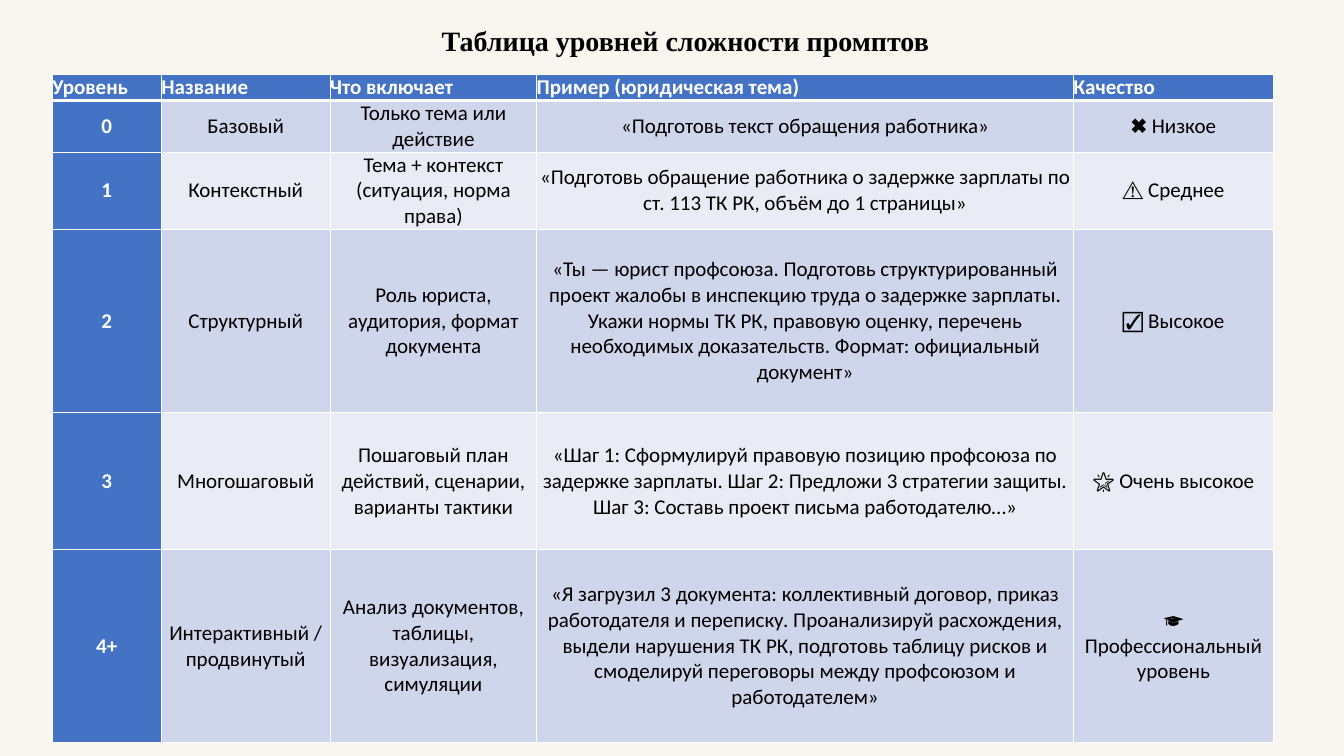
import pptx
import pptx.util
import pptx.dml.color
import pptx.enum.text
import pptx.oxml
import pptx.oxml.ns
from pptx.util import Inches

ALIGN = pptx.enum.text.PP_ALIGN
ANCHOR = pptx.enum.text.MSO_ANCHOR

COLUMNS = [1.3, 2.01, 2.46, 6.39, 2.38]
ROWS = [0.31, 0.57, 0.87, 2.19, 1.63, 2.29]
LEVELS = [
    ["Уровень", "Название", "Что включает", "Пример (юридическая тема)", "Качество"],
    ["0", "Базовый", "Только тема или действие",
     "«Подготовь текст обращения работника»", "✖ Низкое"],
    ["1", "Контекстный", "Тема + контекст (ситуация, норма права)",
     "«Подготовь обращение работника о задержке зарплаты по ст. 113 ТК РК, "
     "объём до 1 страницы»", "⚠ Среднее"],
    ["2", "Структурный", "Роль юриста, аудитория, формат документа",
     "«Ты — юрист профсоюза. Подготовь структурированный проект жалобы в инспекцию труда "
     "о задержке зарплаты. Укажи нормы ТК РК, правовую оценку, перечень необходимых "
     "доказательств. Формат: официальный документ»", "☑ Высокое"],
    ["3", "Многошаговый", "Пошаговый план действий, сценарии, варианты тактики",
     "«Шаг 1: Сформулируй правовую позицию профсоюза по задержке зарплаты. "
     "Шаг 2: Предложи 3 стратегии защиты. Шаг 3: Составь проект письма работодателю…»",
     "🌟 Очень высокое"],
    ["4+", "Интерактивный / продвинутый",
     "Анализ документов, таблицы, визуализация, симуляции",
     "«Я загрузил 3 документа: коллективный договор, приказ работодателя и переписку. "
     "Проанализируй расхождения, выдели нарушения ТК РК, подготовь таблицу рисков и "
     "смоделируй переговоры между профсоюзом и работодателем»",
     "🎓 Профессиональный уровень"],
]


def color(value):
    return pptx.dml.color.RGBColor.from_string(value)


class Deck:
    body_font = "Calibri"
    title_font = "Times New Roman"
    paper, accent, white, black = "F9F6F0", "4472C4", "FFFFFF", "000000"
    bands = ["E9EBF5", "CFD5EA"]

    def __init__(self):
        self.prs = pptx.Presentation()
        self.prs.slide_width, self.prs.slide_height = Inches(16), Inches(9)
        self.s = self.prs.slides.add_slide(self.prs.slide_layouts[6])
        fill = self.s.background.fill
        fill.solid()
        fill.fore_color.rgb = color(self.paper)

    def run(self, p, text, font, size, ink, bold):
        r = p.add_run()
        r.text = text
        r.font.name, r.font.size, r.font.bold = font, pptx.util.Pt(size), bold
        r.font.color.rgb = color(ink)

    def title(self, text, left, top, width, height):
        tf = self.s.shapes.add_textbox(
            Inches(left), Inches(top), Inches(width), Inches(height)).text_frame
        tf.word_wrap = False
        p = tf.paragraphs[0]
        p.line_spacing = 1.07
        self.run(p, text, self.title_font, 24, self.black, True)

    def borders(self, cell, top, bottom):
        tc_pr = cell._tc.get_or_add_tcPr()
        sides = [("L", 1), ("R", 1), ("T", top), ("B", bottom)]
        for i, (side, points) in enumerate(sides):
            tc_pr.insert(i, pptx.oxml.parse_xml(
                f'<a:ln{side} {pptx.oxml.ns.nsdecls("a")} w="{pptx.util.Pt(points)}">'
                f'<a:solidFill><a:srgbClr val="{self.white}"/></a:solidFill></a:ln{side}>'))

    def cell(self, cell, text, row, col):
        strong = row == 0 or col == 0
        cell.margin_left = cell.margin_right = cell.margin_top = cell.margin_bottom = 0
        cell.vertical_anchor = ANCHOR.MIDDLE
        cell.fill.solid()
        cell.fill.fore_color.rgb = color(self.accent if strong else self.bands[row % 2])
        self.borders(cell, 3 if row == 1 else 1, 3 if row == 0 else 1)
        p = cell.text_frame.paragraphs[0]
        p.alignment = ALIGN.JUSTIFY if row == 0 else ALIGN.CENTER
        self.run(p, text, self.body_font, 18, self.white if strong else self.black, strong)

    def table(self, data, left, top, widths, heights):
        table = self.s.shapes.add_table(
            len(heights), len(widths), Inches(left), Inches(top),
            Inches(sum(widths)), Inches(sum(heights))).table
        for column, width in zip(table.columns, widths):
            column.width = Inches(width)
        for i, (row, height) in enumerate(zip(table.rows, heights)):
            row.height = Inches(height)
            for j, text in enumerate(data[i]):
                self.cell(table.cell(i, j), text, i, j)


def main():
    deck = Deck()
    deck.table(LEVELS, 0.62, 0.89, COLUMNS, ROWS)
    deck.title("Таблица уровней сложности промптов", 5.16, 0.2, 6.07, 0.91)
    deck.prs.save("out.pptx")


if __name__ == "__main__":
    main()
